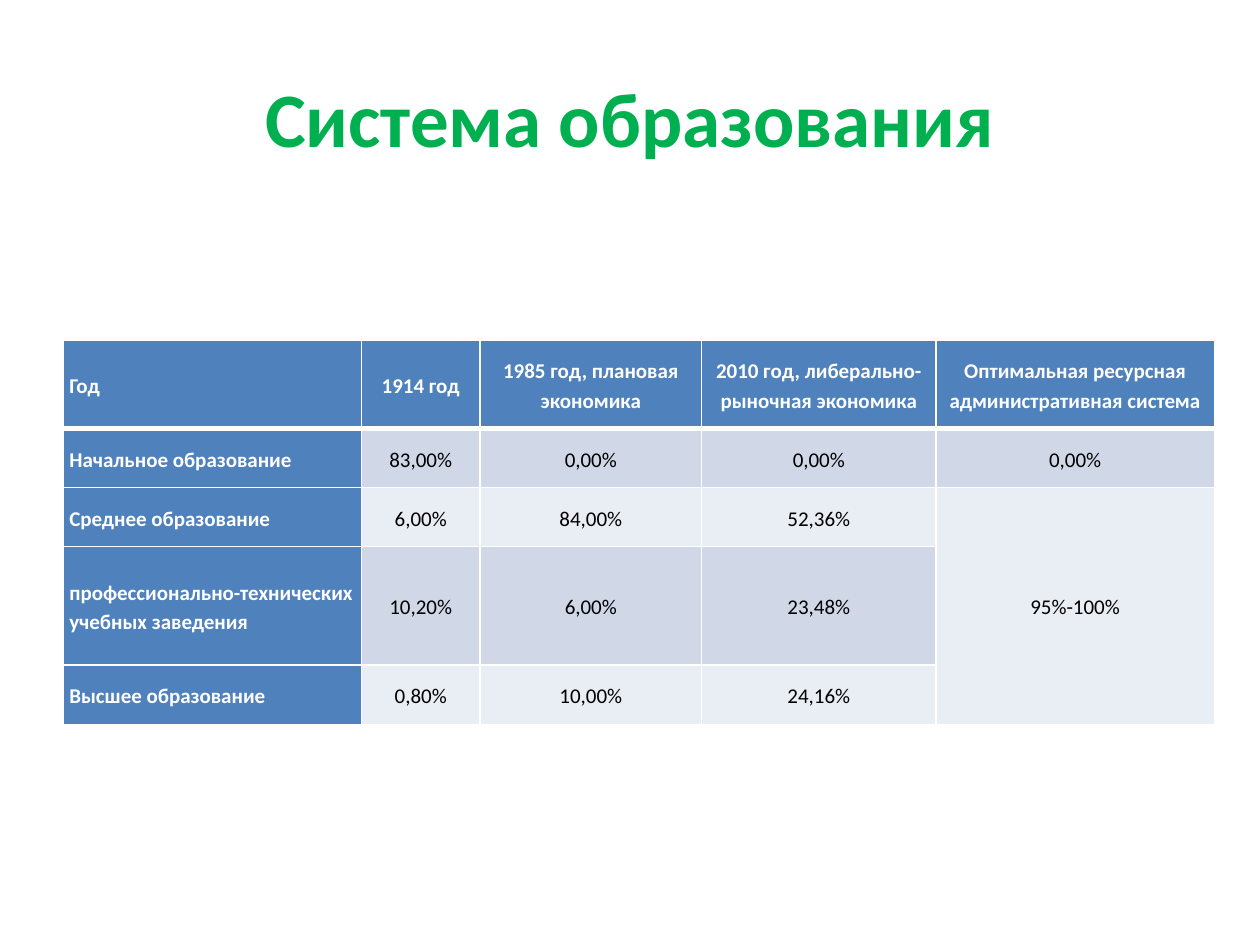
from lxml import etree
from pptx import Presentation
from pptx import util as u
from pptx.dml.color import RGBColor
from pptx.enum import text
from pptx.oxml.ns import qn

HUES = {"title": "00B050", "head": "4F81BD", "odd": "D0D8E8",
        "even": "E9EDF4", "light": "FFFFFF", "dark": "000000"}
LEFT, MID = text.PP_ALIGN.LEFT, text.PP_ALIGN.CENTER
COLS = [170.6, 67.7, 126.7, 133.9, 159.1]
ROWS = [50.4, 33.8, 33.8, 67.7, 33.8]
DATA = [
    ["Год", "1914 год", "1985 год, плановая экономика",
     "2010 год, либерально-рыночная экономика",
     "Оптимальная ресурсная административная система"],
    ["Начальное образование", "83,00%", "0,00%", "0,00%", "0,00%"],
    ["Среднее образование", "6,00%", "84,00%", "52,36%", "95%-100%"],
    ["профессионально-технических учебных заведения",
     "10,20%", "6,00%", "23,48%", ""],
    ["Высшее образование", "0,80%", "10,00%", "24,16%", ""],
]


class Deck:
    font = "Calibri"
    pad = {"margin_left": u.Pt(3.6), "margin_right": u.Pt(3.6),
           "margin_top": 0, "margin_bottom": 0,
           "vertical_anchor": text.MSO_ANCHOR.MIDDLE}

    def __init__(self, wide, high):
        self.prs = Presentation()
        self.prs.slide_width, self.prs.slide_height = u.Pt(wide), u.Pt(high)
        self.slide = self.prs.slides.add_slide(self.prs.slide_layouts[6])

    def put(self, item, values):
        for name, value in values.items():
            setattr(item, name, value)

    def label(self, frame, words, size, hue, bold, align, space=1):
        para = frame.paragraphs[0]
        self.put(para, {"alignment": align, "line_spacing": space})
        run = para.add_run()
        run.text = words
        self.put(run.font, {"name": self.font, "size": u.Pt(size), "bold": bold})
        run.font.color.rgb = RGBColor.from_string(HUES[hue])

    def title(self, box, words):
        frame = self.slide.shapes.add_textbox(*map(u.Pt, box)).text_frame
        self.put(frame, {"word_wrap": True,
                         "vertical_anchor": text.MSO_ANCHOR.MIDDLE})
        self.label(frame, words, 44, "title", True, MID)

    def edge(self, cell, sides):
        props = cell._tc.get_or_add_tcPr()
        for spot, (side, width) in enumerate(sides.items()):
            line = etree.Element(qn("a:ln" + side), w=str(u.Pt(width)))
            fill = etree.SubElement(line, qn("a:solidFill"))
            etree.SubElement(fill, qn("a:srgbClr"), val=HUES["light"])
            props.insert(spot, line)

    def cell(self, cell, words, row, col):
        head = row == 0 or col == 0
        hue = "head" if head else "odd" if row % 2 else "even"
        self.put(cell, self.pad)
        cell.fill.solid()
        cell.fill.fore_color.rgb = RGBColor.from_string(HUES[hue])
        self.edge(cell, {"L": 1, "R": 1, "T": 3 if row == 1 else 1,
                         "B": 3 if row == 0 else 1})
        if words:
            self.label(cell.text_frame, words, 12, "light" if head else "dark",
                       head, MID if col else LEFT, 1.15)

    def table(self, left, top, cols, rows, data):
        box = map(u.Pt, (left, top, sum(cols), sum(rows)))
        grid = self.slide.shapes.add_table(len(rows), len(cols), *box).table
        grid.horz_banding = False
        for col, wide in zip(grid.columns, cols):
            col.width = u.Pt(wide)
        for row, high in zip(grid.rows, rows):
            row.height = u.Pt(high)
        for i, line in enumerate(data):
            for j, words in enumerate(line):
                self.cell(grid.cell(i, j), words, i, j)
        return grid


def main():
    deck = Deck(720, 540)
    deck.title((36, 21.6, 648, 90), "Система образования")
    grid = deck.table(36, 194.4, COLS, ROWS, DATA)
    grid.cell(2, 4).merge(grid.cell(4, 4))
    deck.prs.save("out.pptx")


if __name__ == "__main__":
    main()
